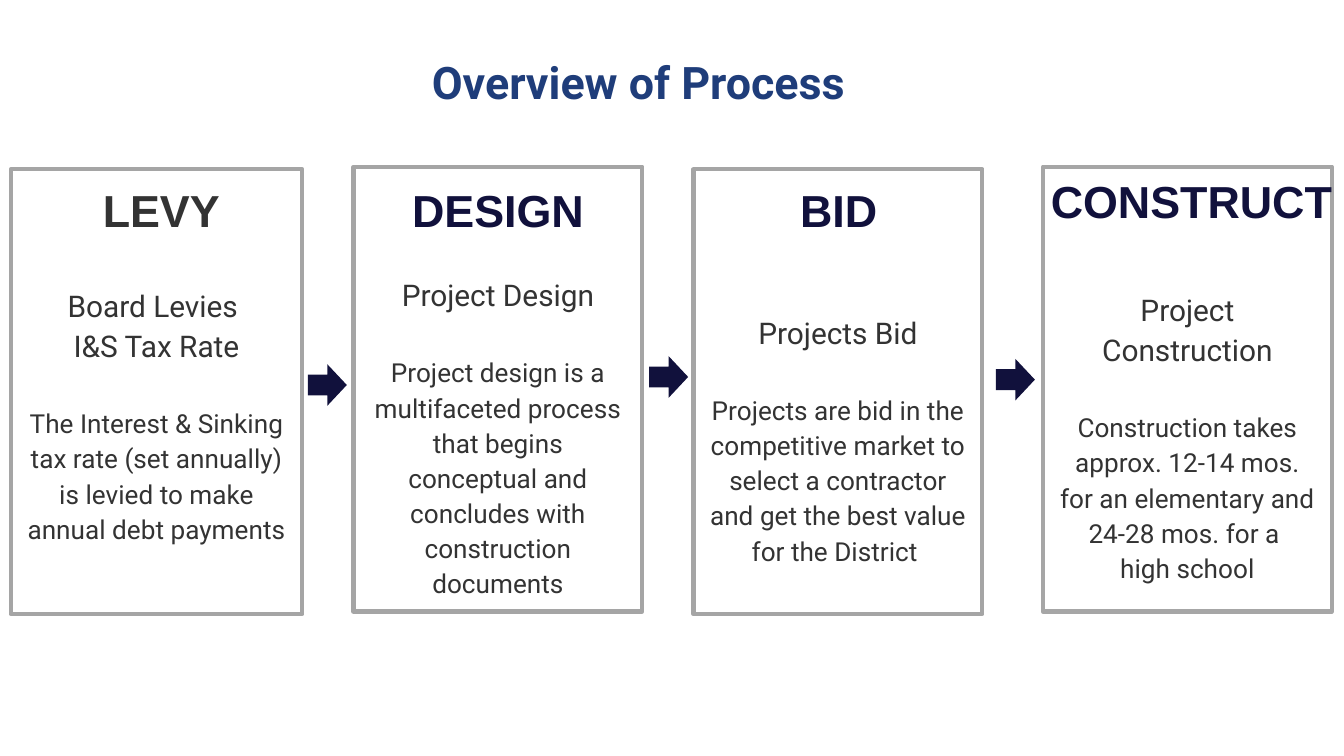
import pptx
import pptx.util
import pptx.dml.color
from pptx.enum.shapes import MSO_SHAPE
from pptx.enum.text import MSO_ANCHOR, MSO_AUTO_SIZE, PP_ALIGN

Inches, Pt = pptx.util.Inches, pptx.util.Pt

TITLE = "Overview of Process"
NAVY, GRAY, BORDER, BLUE, WHITE = "11113C", "333333", "A5A5A5", "1F3D7A", "FFFFFF"
BOX_HEIGHT, HEADING_HEIGHT = 3.31, 0.57
ARROW_SIZE = (0.29, 0.31)

# box: left, top, width; heading_at: left, top, width; inset: space above the text
STEPS = [
    {"heading": "LEVY", "color": GRAY, "box": (0.08, 1.26, 2.17),
     "heading_at": (0.17, 1.31, 2.06), "inset": 0.85,
     "summary": ["Board Levies ", "I&S Tax Rate"],
     "details": ["The Interest & Sinking tax rate (set annually) is levied "
                 "to make annual debt payments"]},
    {"heading": "DESIGN", "color": NAVY, "box": (2.63, 1.24, 2.15),
     "heading_at": (2.83, 1.31, 1.75), "inset": 0.79,
     "summary": ["Project Design"],
     "details": ["Project design is a multifaceted process that begins conceptual "
                 "and concludes with construction documents"]},
    {"heading": "BID", "color": NAVY, "box": (5.16, 1.26, 2.15),
     "heading_at": (5.32, 1.31, 1.84), "inset": 1.05,
     "summary": ["Projects Bid"],
     "details": ["Projects are bid in the competitive market to select a contractor "
                 "and get the best value for the District "]},
    {"heading": "CONSTRUCT", "color": NAVY, "box": (7.76, 1.24, 2.15),
     "heading_at": (7.68, 1.24, 2.37), "inset": 0.9,
     "fill": WHITE, "border": "A6A6A6",
     "summary": ["Project Construction"],
     "details": ["Construction takes approx. 12-14 mos. for an elementary and",
                 "24-28 mos. for a ", "high school"]},
]
ARROWS = [(2.29, 2.71), (4.83, 2.65), (7.41, 2.67)]


def rgb(value):
    return pptx.dml.color.RGBColor.from_string(value)


def format_paragraph(p, font, size, color, bold=False):
    p.alignment = PP_ALIGN.CENTER
    p.font.name = font
    p.font.size = Pt(size)
    p.font.bold = bold
    p.font.color.rgb = rgb(color)


def set_fill(sp, color):
    """Fill with a colour, or leave see-through when there is none."""
    if color:
        sp.fill.solid()
        sp.fill.fore_color.rgb = rgb(color)
    else:
        sp.fill.background()


def add_box(s, step):
    left, top, width = step["box"]
    box = s.shapes.add_shape(MSO_SHAPE.RECTANGLE, Inches(left), Inches(top),
                             Inches(width), Inches(BOX_HEIGHT))
    box.shadow.inherit = False
    set_fill(box, step.get("fill"))
    box.line.color.rgb = rgb(step.get("border", BORDER))
    box.line.width = Pt(2.25)
    tf = box.text_frame
    tf.word_wrap = True
    tf.vertical_anchor = MSO_ANCHOR.TOP
    tf.margin_top = Inches(step["inset"])
    first_detail = len(step["summary"])
    for i, line in enumerate(step["summary"] + step["details"]):
        p = tf.paragraphs[0] if i == 0 else tf.add_paragraph()
        p.text = line
        p.line_spacing = 1.12
        if i == first_detail:
            p.space_before = Pt(21.5)
        format_paragraph(p, "Roboto", 16 if i < first_detail else 14, GRAY)


def add_heading(s, step):
    left, top, width = step["heading_at"]
    heading = s.shapes.add_textbox(Inches(left), Inches(top), Inches(width),
                                   Inches(HEADING_HEIGHT))
    tf = heading.text_frame
    tf.word_wrap = True
    tf.text = step["heading"]
    format_paragraph(tf.paragraphs[0], "Arial", 24, step["color"], bold=True)


def add_arrow(s, left, top):
    arrow = s.shapes.add_shape(MSO_SHAPE.RIGHT_ARROW, Inches(left), Inches(top),
                               *map(Inches, ARROW_SIZE))
    arrow.shadow.inherit = False
    set_fill(arrow, NAVY)
    arrow.line.fill.background()


def add_title(s):
    title = s.shapes.title
    title.left, title.top = Inches(1.02), Inches(0.4)
    title.width, title.height = Inches(7.56), Inches(0.47)
    tf = title.text_frame
    tf.text = TITLE
    tf.margin_left = 0
    tf.vertical_anchor = MSO_ANCHOR.TOP
    tf.auto_size = MSO_AUTO_SIZE.SHAPE_TO_FIT_TEXT
    tf.paragraphs[0].line_spacing = 0.9
    format_paragraph(tf.paragraphs[0], "Roboto", 24, BLUE, bold=True)


def main():
    prs = pptx.Presentation()
    prs.slide_width = Inches(10)
    prs.slide_height = prs.slide_width * 9 // 16
    s = prs.slides.add_slide(prs.slide_layouts[5])
    add_title(s)
    for step in STEPS:
        add_box(s, step)
    for left, top in ARROWS:
        add_arrow(s, left, top)
    for step in STEPS:
        add_heading(s, step)
    prs.save("out.pptx")


if __name__ == "__main__":
    main()
